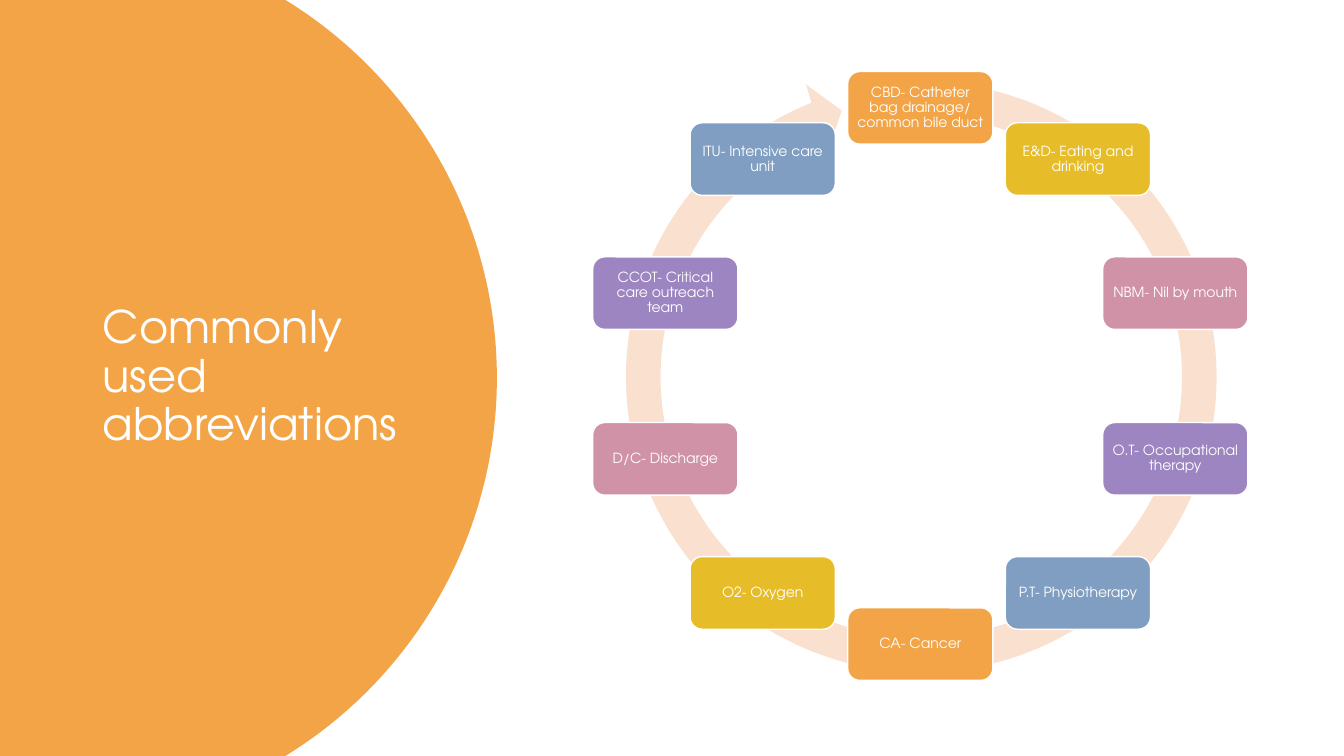
import math
from typing import NamedTuple

from lxml import etree
from pptx import Presentation
from pptx.dml.color import RGBColor
from pptx.enum.shapes import MSO_SHAPE
from pptx.enum.text import MSO_ANCHOR, PP_ALIGN
from pptx.oxml.ns import qn
from pptx.util import Emu, Inches, Pt

ROUNDED = MSO_SHAPE.ROUNDED_RECTANGLE
RING_ARROW = MSO_SHAPE.CIRCULAR_ARROW
MIDDLE = MSO_ANCHOR.MIDDLE
LEFT, CENTER = PP_ALIGN.LEFT, PP_ALIGN.CENTER

FONT = "TeX Gyre Adventor"
COLORS = {
    "orange": "F3A447",
    "gold": "E7BC29",
    "pink": "D092A7",
    "purple": "9C85C0",
    "blue": "809EC2",
    "peach": "FAE0CF",
    "white": "FFFFFF",
}

# The slide is a grid of square cells, ten to the inch.
COLS, ROWS = 133.33, 75
CELL = Inches(0.1)

DISC_X, DISC_RADIUS = 5.3, 44
RING_X, RING_Y = 91.3, 37.3
RING_RADIUS = 26.6
ARROW_SIZE = 62.4
ARROW_ADJUSTMENTS = (0.055, 3.307, 148.713, 167.492, 0.058)
CARD_W, CARD_H = 14.4, 7.2


class Card(NamedTuple):
    text: str
    color: str


CARDS = [
    Card("CBD- Catheter bag drainage/ common bile duct", "orange"),
    Card("E&D- Eating and drinking", "gold"),
    Card("NBM- Nil by mouth", "pink"),
    Card("O.T- Occupational therapy", "purple"),
    Card("P.T- Physiotherapy", "blue"),
    Card("CA- Cancer", "orange"),
    Card("O2- Oxygen", "gold"),
    Card("D/C- Discharge", "pink"),
    Card("CCOT- Critical care outreach team", "purple"),
    Card("ITU- Intensive care unit", "blue"),
]


def cells(n: float) -> Emu:
    return Emu(round(n * CELL))


def rgb(name: str) -> RGBColor:
    return RGBColor.from_string(COLORS[name])


def paint(sp, color: str) -> None:
    """Give a shape a flat fill without outline or shadow."""
    sp.shadow.inherit = False
    sp.fill.solid()
    sp.fill.fore_color.rgb = rgb(color)
    sp.line.fill.background()


def write(sp, text: str, size: float, align, inset: float) -> None:
    tf = sp.text_frame
    tf.word_wrap = True
    tf.vertical_anchor = MIDDLE
    tf.margin_left = tf.margin_right = cells(inset)
    tf.margin_top = tf.margin_bottom = cells(min(inset, 0.5))
    p = tf.paragraphs[0]
    p.alignment = align
    p.line_spacing = 0.9
    r = p.add_run()
    r.text = text
    r.font.name = FONT
    r.font.size = Pt(size)
    r.font.color.rgb = rgb("white")


def add_disc(shapes) -> None:
    """Fill the left side with a disc cut by the slide's edges."""
    half = math.degrees(math.asin(ROWS / 2 / DISC_RADIUS))
    steps = 120
    angles = [math.radians(half * (2 * i / steps - 1)) for i in range(steps + 1)]
    arc = [
        (cells(DISC_X + DISC_RADIUS * math.cos(a)),
         cells(ROWS / 2 + DISC_RADIUS * math.sin(a)))
        for a in angles
    ]
    builder = shapes.build_freeform(0, 0)
    builder.add_line_segments(arc + [(0, cells(ROWS))], close=True)
    paint(builder.convert_to_shape(), "orange")


def add_ring(shapes) -> None:
    sp = shapes.add_shape(
        RING_ARROW,
        cells(RING_X + 0.1 - ARROW_SIZE / 2), cells(RING_Y + 0.1 - ARROW_SIZE / 2),
        cells(ARROW_SIZE), cells(ARROW_SIZE),
    )
    for i, value in enumerate(ARROW_ADJUSTMENTS):
        sp.adjustments[i] = value
    paint(sp, "peach")


def add_card(shapes, card: Card, angle: float) -> None:
    """Centre a card on the ring, with the angle clockwise from the top."""
    x = RING_X + RING_RADIUS * math.sin(angle)
    y = RING_Y - RING_RADIUS * math.cos(angle)
    sp = shapes.add_shape(
        ROUNDED, cells(x - CARD_W / 2), cells(y - CARD_H / 2),
        cells(CARD_W), cells(CARD_H),
    )
    paint(sp, card.color)
    sp.line.color.rgb = rgb("white")
    sp.line.width = Pt(1)
    write(sp, card.text, 10, CENTER, 0.4)


def main() -> None:
    prs = Presentation()
    prs.slide_width, prs.slide_height = cells(COLS), cells(ROWS)
    shapes = prs.slides.add_slide(prs.slide_layouts[6]).shapes

    add_disc(shapes)
    title = shapes.add_textbox(cells(9.2), cells(7), cells(32.3), cells(60.9))
    write(title, "Commonly used abbreviations", 32, LEFT, 1)

    add_ring(shapes)
    for i, card in enumerate(CARDS):
        add_card(shapes, card, math.tau * i / len(CARDS))

    prs.save("out.pptx")


if __name__ == "__main__":
    main()
